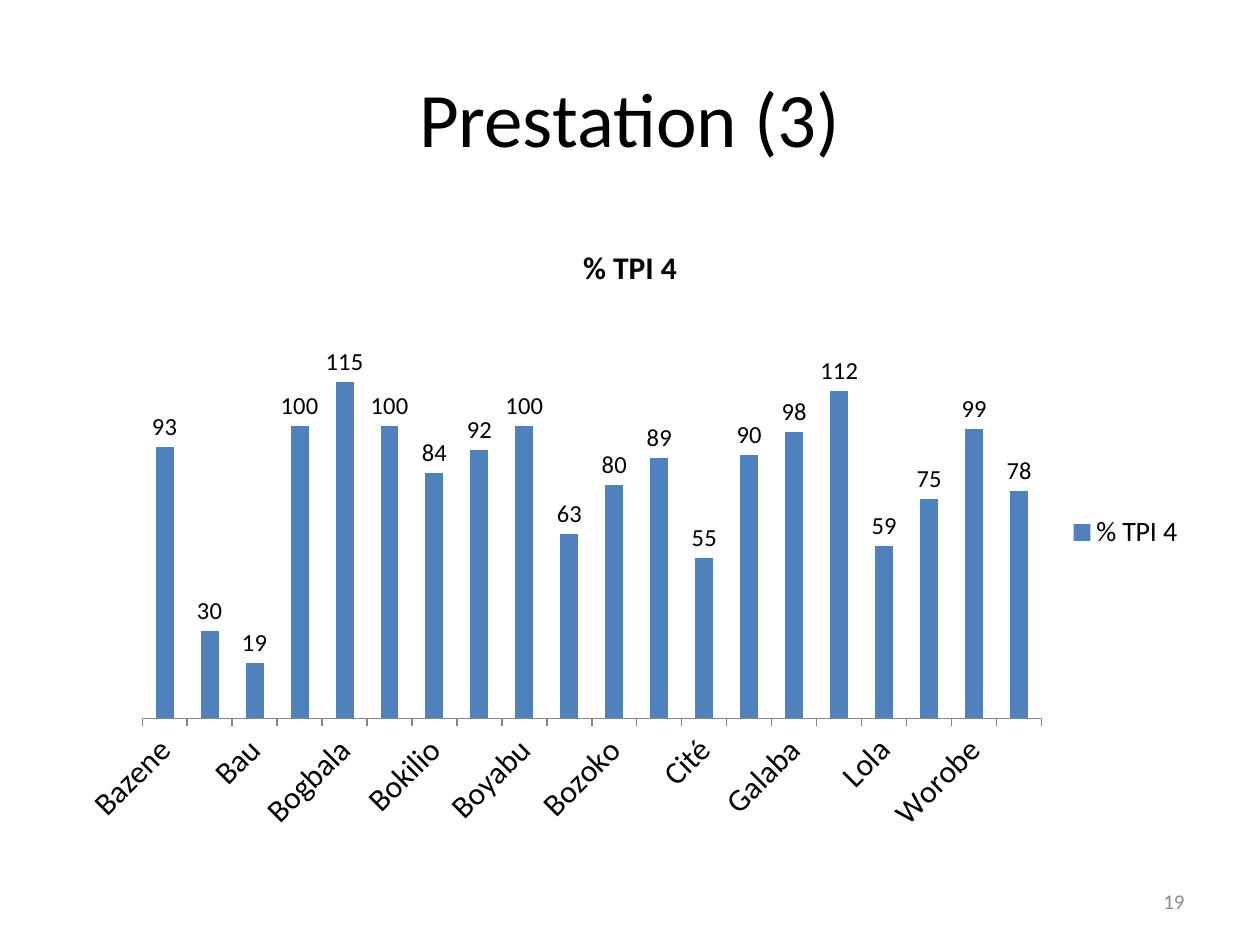
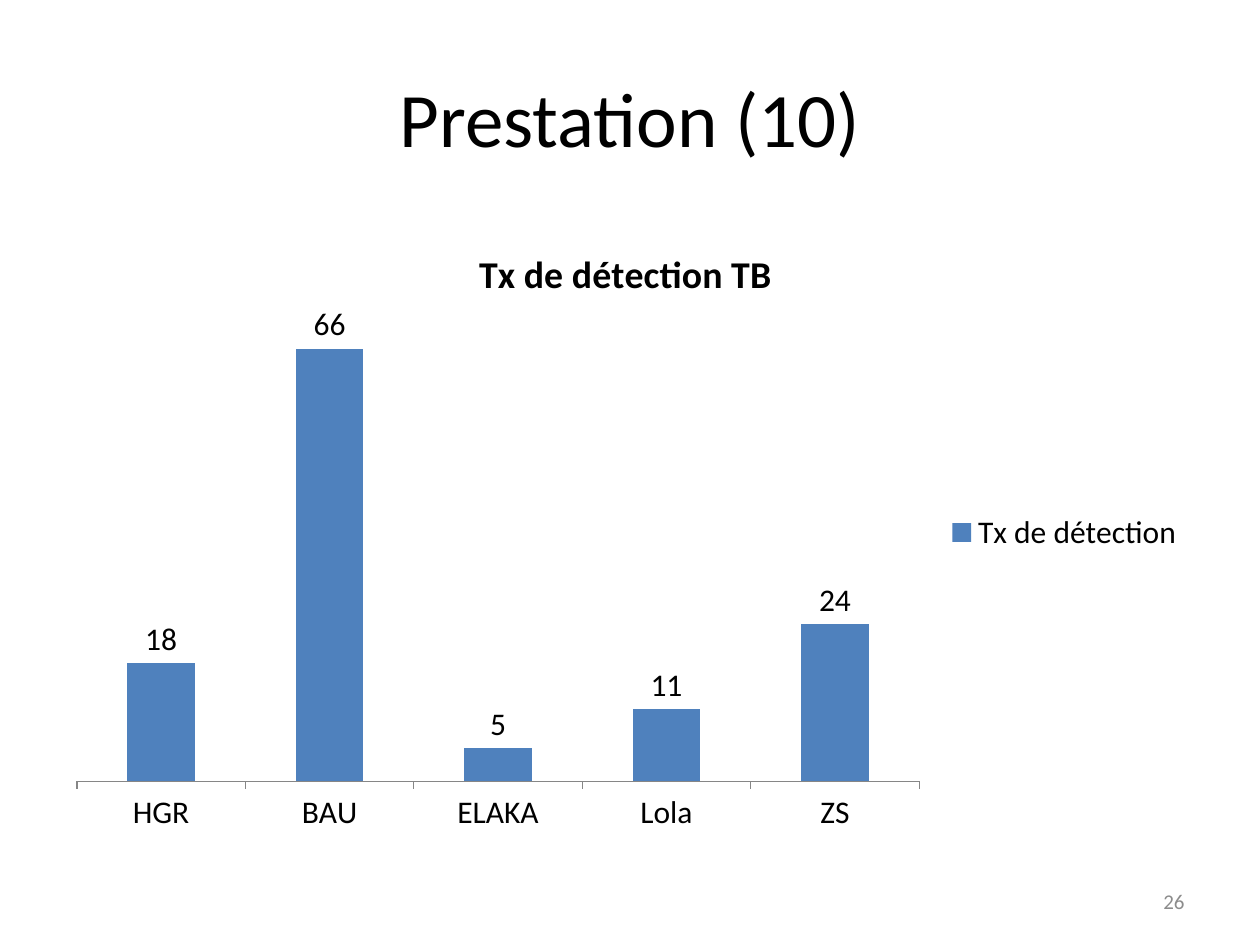
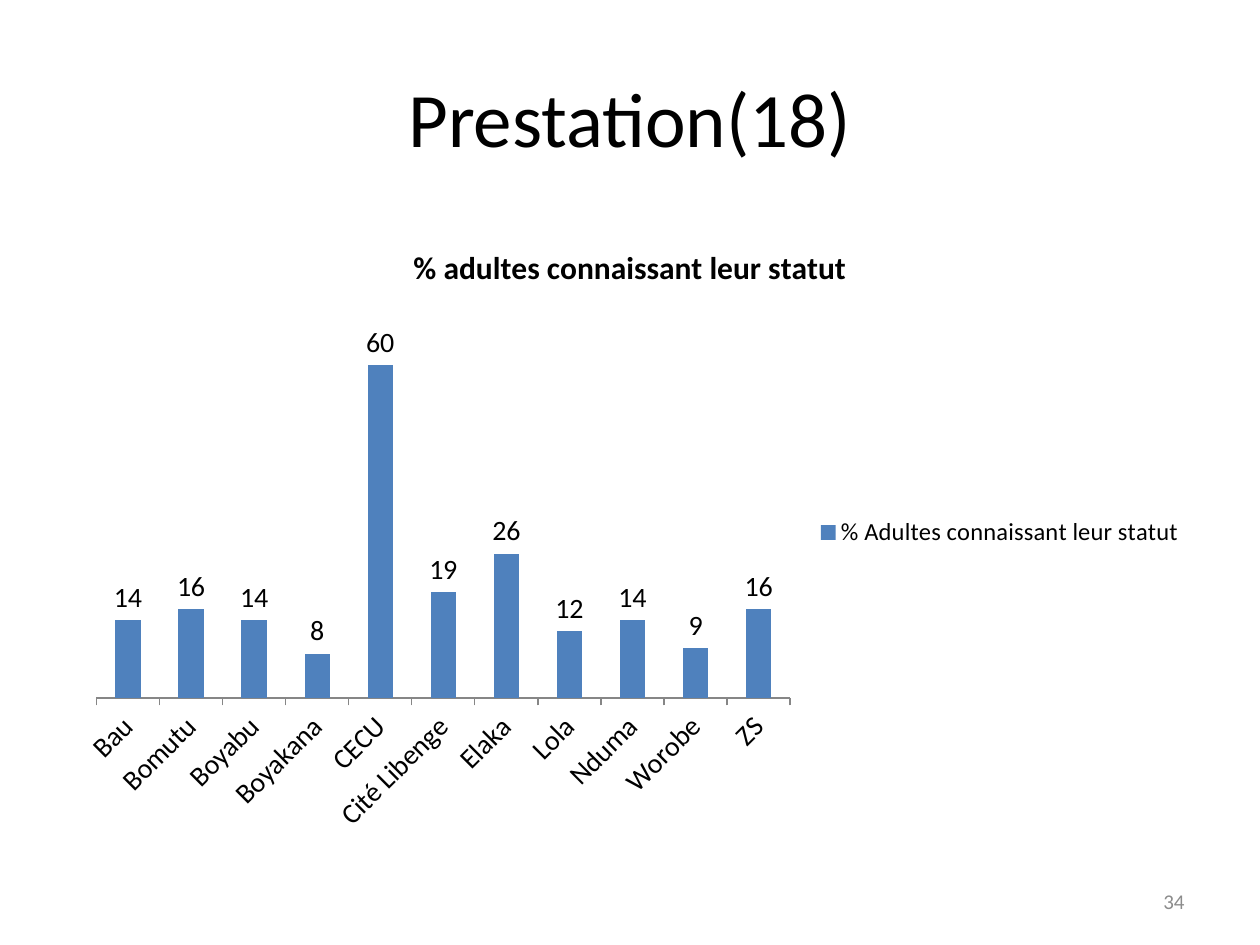
from dataclasses import dataclass

from pptx import Presentation
from pptx import util as u
from pptx.chart.data import CategoryChartData
from pptx.dml.color import RGBColor
from pptx.enum import chart as ch
from pptx.enum import text


@dataclass(frozen=True)
class Theme:
    font: str = "Calibri"
    ink: RGBColor = RGBColor(0x00, 0x00, 0x00)
    muted: RGBColor = RGBColor(0x8C, 0x8C, 0x8C)
    axis: RGBColor = RGBColor(0x86, 0x86, 0x86)
    bar: RGBColor = RGBColor(0x4F, 0x81, 0xBD)
    title: float = 44
    number: float = 12


@dataclass(frozen=True)
class Sizes:
    """Type sizes of one chart, in points."""
    title: float
    category: float
    label: float
    legend: float


T = Theme()

# Boxes shared by the slides: left, top, width, height in cm
SLIDE = (25.4, 19.05)
TITLE_BOX = (1.27, 0.76, 22.86, 3.18)
CHART_BOX = (1.27, 4.45, 22.86, 12.57)
WIDE_CHART_BOX = (1.09, 4.45, 23.04, 12.57)
NUMBER_BOX = (18.21, 17.65, 5.92, 1.02)

SLIDES = [
    dict(title="Prestation (3)", number=19, box=CHART_BOX,
         heading="% TPI 4", series="% TPI 4", sizes=Sizes(18, 18, 14, 16),
         data={"Bazene": 93, "Batanga": 30, "Bau": 19, "Bavula": 100,
               "Bogbala": 115, "Bogilima": 100, "Bokilio": 84, "Bomutu": 92,
               "Boyabu": 100, "Boyakana": 63, "Bozoko": 80, "CECU": 89,
               "Cité": 55, "Elaka": 90, "Galaba": 98, "Kangu": 112,
               "Lola": 59, "Nduma": 75, "Worobe": 99, "ZS": 78}),
    dict(title="Prestation (10)", number=26, box=WIDE_CHART_BOX,
         heading="Tx de détection TB", series="Tx de détection",
         sizes=Sizes(21.6, 18, 18, 18),
         data={"HGR": 18, "BAU": 66, "ELAKA": 5, "Lola": 11, "ZS": 24}),
    dict(title="Prestation(18)", number=34, box=CHART_BOX,
         heading="% adultes connaissant leur statut",
         series="% Adultes connaissant leur statut",
         sizes=Sizes(18, 16, 16, 14),
         data={"Bau": 14, "Bomutu": 16, "Boyabu": 14, "Boyakana": 8,
               "CECU": 60, "Cité Libenge": 19, "Elaka": 26, "Lola": 12,
               "Nduma": 14, "Worobe": 9, "ZS": 16}),
]


def cm(box):
    return [u.Cm(v) for v in box]


def set_font(font, size, color=T.ink, bold=False):
    font.name = T.font
    font.size = u.Pt(size)
    font.bold = bold
    font.color.rgb = color


def add_text(s, box, words, size, color, align):
    tf = s.shapes.add_textbox(*cm(box)).text_frame
    tf.word_wrap = True
    tf.vertical_anchor = text.MSO_ANCHOR.MIDDLE
    p = tf.paragraphs[0]
    p.text = words
    p.alignment = align
    set_font(p.font, size, color)


def add_bar_chart(s, box, heading, series, data, sizes):
    cd = CategoryChartData(number_format="0")
    cd.categories = list(data)
    cd.add_series(series, list(data.values()))
    chart = s.shapes.add_chart(
        ch.XL_CHART_TYPE.COLUMN_CLUSTERED, *cm(box), cd).chart
    set_font(chart.font, sizes.category)

    # Heading and legend
    chart.has_title = True
    p = chart.chart_title.text_frame.paragraphs[0]
    p.text = heading
    set_font(p.font, sizes.title, bold=True)
    chart.has_legend = True
    chart.legend.position = ch.XL_LEGEND_POSITION.RIGHT
    chart.legend.include_in_layout = False
    set_font(chart.legend.font, sizes.legend)

    # Axes
    chart.value_axis.visible = False
    chart.value_axis.has_major_gridlines = False
    axis = chart.category_axis
    axis.major_tick_mark = ch.XL_TICK_MARK.OUTSIDE
    axis.format.line.color.rgb = T.axis
    axis.format.line.width = u.Pt(0.75)
    set_font(axis.tick_labels.font, sizes.category)

    # Bars and their values
    plot = chart.plots[0]
    plot.gap_width = 150
    plot.vary_by_categories = False
    bars = plot.series[0]
    bars.format.fill.solid()
    bars.format.fill.fore_color.rgb = T.bar
    labels = bars.data_labels
    labels.show_value = True
    labels.number_format = "0"
    labels.number_format_is_linked = False
    labels.position = ch.XL_LABEL_POSITION.OUTSIDE_END
    set_font(labels.font, sizes.label)


def add_chart_slide(prs, title, number, box, **chart):
    s = prs.slides.add_slide(prs.slide_layouts[6])
    add_text(s, TITLE_BOX, title, T.title, T.ink, text.PP_ALIGN.CENTER)
    add_bar_chart(s, box, **chart)
    add_text(s, NUMBER_BOX, str(number), T.number, T.muted,
             text.PP_ALIGN.RIGHT)


def main():
    prs = Presentation()
    prs.slide_width, prs.slide_height = cm(SLIDE)
    for content in SLIDES:
        add_chart_slide(prs, **content)
    prs.save("out.pptx")


if __name__ == "__main__":
    main()
